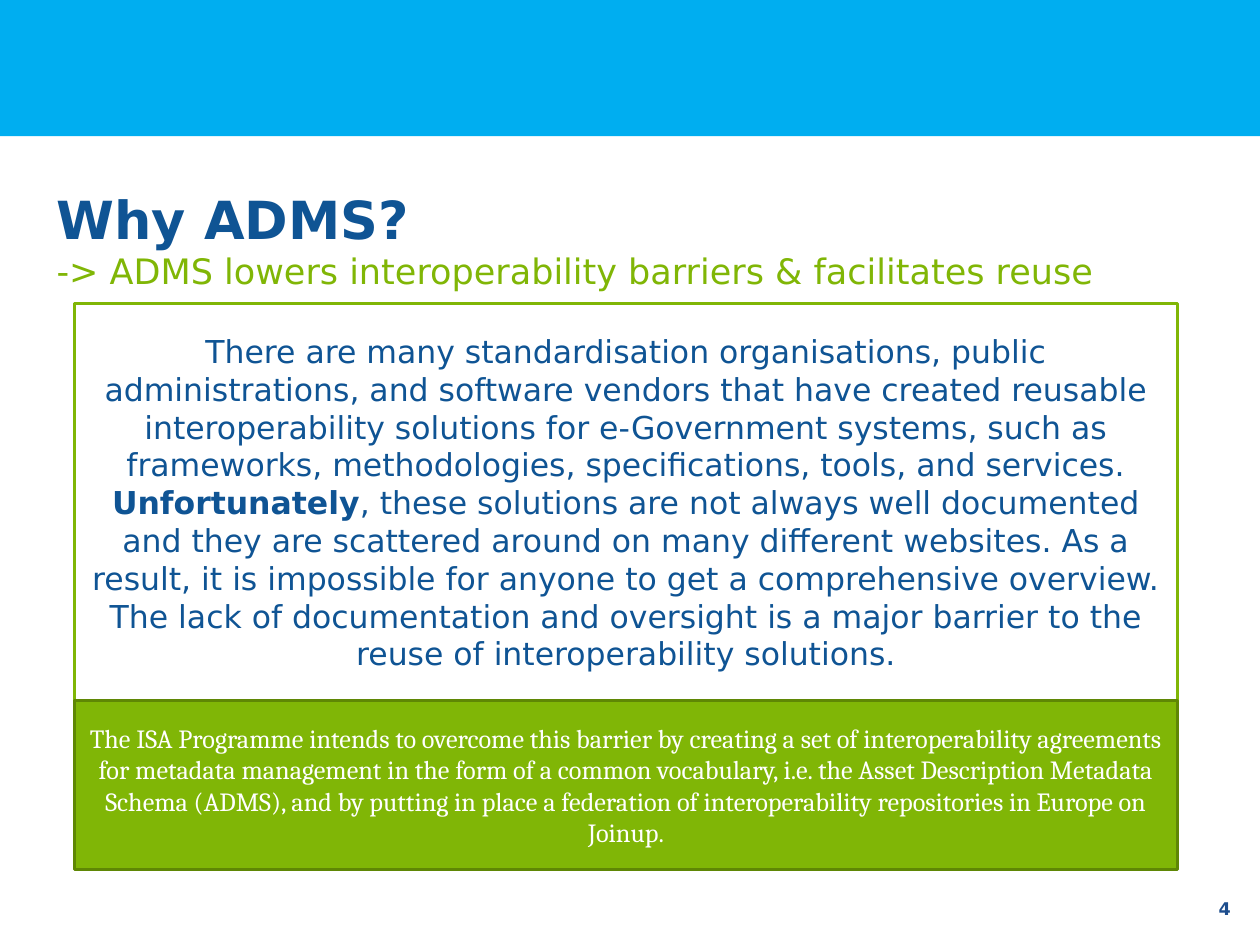
from pptx import Presentation
from pptx.dml.color import RGBColor
from pptx.enum.shapes import MSO_SHAPE
from pptx.enum.text import MSO_ANCHOR, PP_ALIGN
from pptx.util import Pt

BLUE, GREEN, WHITE = "0F5494", "80B606", "FFFFFF"
SANS, SERIF = "DejaVu Sans", "Cambria"

# Content: paragraphs are lists of (text, size, font, colour, bold)
TITLE = [
    [("Why ADMS?", 30, SANS, BLUE, True)],
    [("-> ADMS lowers interoperability barriers & facilitates reuse", 20, SANS, GREEN, False)],
]
PROBLEM = [[
    ("There are many standardisation organisations, public administrations, and "
     "software vendors that have created reusable interoperability solutions for "
     "e-Government systems, such as frameworks, methodologies, specifications, "
     "tools, and services. ", 18, SANS, BLUE, False),
    ("Unfortunately", 18, SANS, BLUE, True),
    (", these solutions are not always well documented and they are scattered "
     "around on many different websites. As a result, it is impossible for anyone "
     "to get a comprehensive overview. The lack of documentation and oversight is "
     "a major barrier to the reuse of interoperability solutions.", 18, SANS, BLUE, False),
]]
ANSWER = [[
    ("The ISA Programme intends to overcome this barrier by creating a set of "
     "interoperability agreements for metadata management in the form of a common "
     "vocabulary, i.e. the Asset Description Metadata Schema (ADMS), and by putting "
     "in place a federation of interoperability repositories in Europe on Joinup.",
     15, SERIF, WHITE, False),
]]
PAGE_NUMBER = [[("4", 10, SANS, "1D4D8D", True)]]

# Layout in points: the two panels share a column and touch
PAGE_WIDTH, PAGE_HEIGHT = 720, 540
PANEL_LEFT, PANEL_TOP, PANEL_WIDTH = 42.5, 173.5, 630.5
PROBLEM_HEIGHT, ANSWER_HEIGHT = 226.8, 96.5
TITLE_INDENT = 28


def colour(value):
    return RGBColor.from_string(value)


def write(box, paragraphs, align, indent=0):
    frame = box.text_frame
    frame.word_wrap = True
    frame.vertical_anchor = MSO_ANCHOR.MIDDLE
    for index, spans in enumerate(paragraphs):
        para = frame.paragraphs[0] if index == 0 else frame.add_paragraph()
        para.alignment = align
        if indent:
            properties = para._p.get_or_add_pPr()
            properties.set("marL", str(Pt(indent)))
            properties.set("indent", str(-Pt(indent)))
        for text, size, font, ink, bold in spans:
            span = para.add_run()
            span.text = text
            span.font.size = Pt(size)
            span.font.name = font
            span.font.bold = bold
            span.font.color.rgb = colour(ink)


def add_box(page, left, top, width, height, fill, line=None, paragraphs=()):
    box = page.shapes.add_shape(
        MSO_SHAPE.RECTANGLE, Pt(left), Pt(top), Pt(width), Pt(height))
    box.shadow.inherit = False
    box.fill.solid()
    box.fill.fore_color.rgb = colour(fill)
    if line:
        box.line.color.rgb = colour(line)
        box.line.width = Pt(2)
    else:
        box.line.fill.background()
    write(box, paragraphs, PP_ALIGN.CENTER)


deck = Presentation()
deck.slide_width, deck.slide_height = Pt(PAGE_WIDTH), Pt(PAGE_HEIGHT)
page = deck.slides.add_slide(deck.slide_layouts[6])

# Top band and page number
add_box(page, 0, 0, PAGE_WIDTH, 77.8, "00AEF0")
add_box(page, 685.4, 504.7, 28.8, 28.8, WHITE, paragraphs=PAGE_NUMBER)

# Problem panel
add_box(page, PANEL_LEFT, PANEL_TOP, PANEL_WIDTH, PROBLEM_HEIGHT, WHITE, GREEN, PROBLEM)

# Title and subtitle
title = page.shapes.add_textbox(Pt(25.2), Pt(100), Pt(686), Pt(73.5))
write(title, TITLE, PP_ALIGN.LEFT, TITLE_INDENT)

# Answer panel
add_box(page, PANEL_LEFT, PANEL_TOP + PROBLEM_HEIGHT, PANEL_WIDTH, ANSWER_HEIGHT,
        GREEN, "5F8704", ANSWER)

deck.save("out.pptx")
